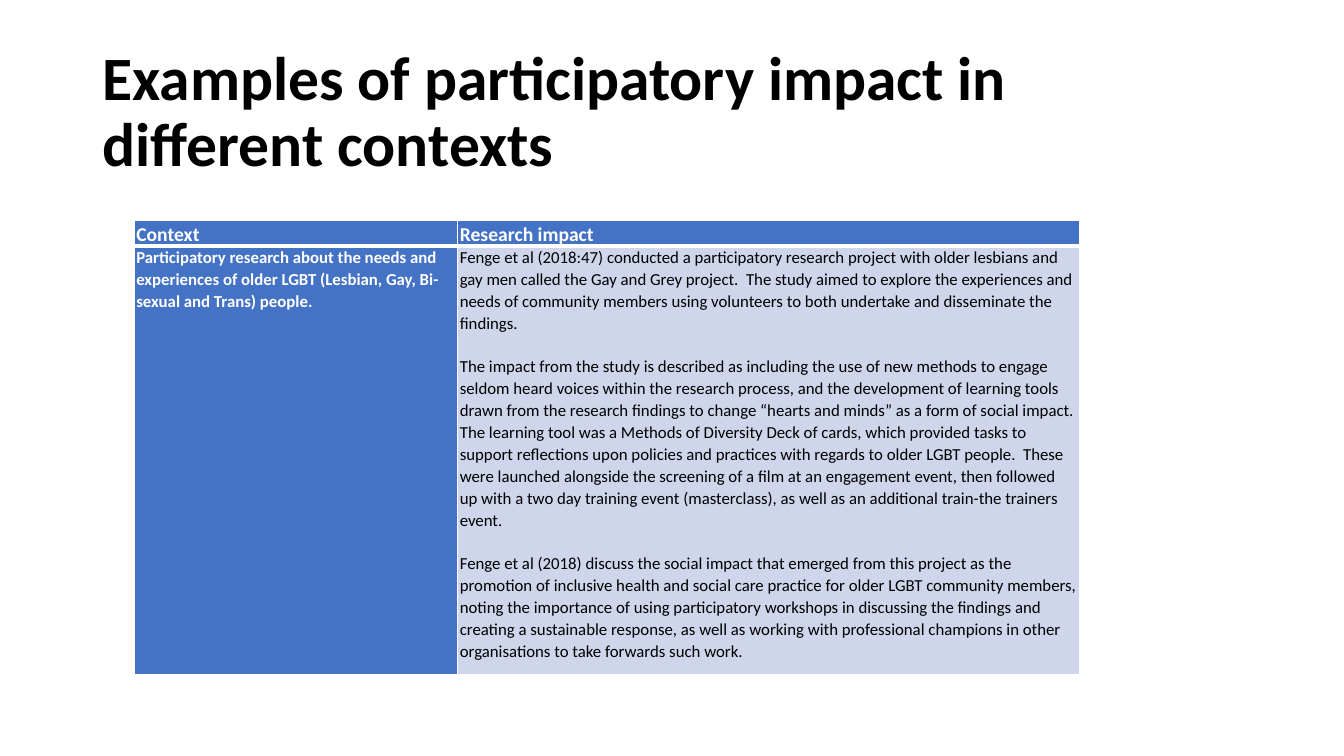
"""Build a slide with a table of participatory research impact."""
from dataclasses import dataclass

from lxml import etree
from pptx import Presentation
from pptx.dml.color import RGBColor
from pptx.enum.text import MSO_ANCHOR
from pptx.oxml.ns import qn
from pptx.util import Pt

MIDDLE = MSO_ANCHOR.MIDDLE
FONT = "Calibri"
COLOURS = {"black": "000000", "white": "FFFFFF", "blue": "4472C4", "pale": "CFD5EA"}
COLUMN_WIDTHS = (231.1, 444.2)
ROW_HEIGHTS = (13, 306)
PARAGRAPH_GAP = 15.6


@dataclass(frozen=True)
class Entry:
    row: int
    column: int
    paragraphs: tuple[str, ...]
    size: float = 12
    bold: bool = True
    colour: str = "white"
    fill: str = "blue"
    bottom_border: float = 1


ENTRIES = (
    Entry(0, 0, ("Context",), size=14, bottom_border=3),
    Entry(0, 1, ("Research impact",), size=14, bottom_border=3),
    Entry(1, 0, (
        "Participatory research about the needs and experiences of older LGBT "
        "(Lesbian, Gay, Bi-sexual and Trans) people.",
    )),
    Entry(1, 1, (
        "Fenge et al (2018:47) conducted a participatory research project with older "
        "lesbians and gay men called the Gay and Grey project.  The study aimed to "
        "explore the experiences and needs of community members using volunteers to "
        "both undertake and disseminate the findings.",
        "The impact from the study is described as including the use of new methods "
        "to engage seldom heard voices within the research process, and the "
        "development of learning tools drawn from the research findings to change "
        "“hearts and minds” as a form of social impact. The learning tool was a "
        "Methods of Diversity Deck of cards, which provided tasks to support "
        "reflections upon policies and practices with regards to older LGBT people.  "
        "These were launched alongside the screening of a film at an engagement "
        "event, then followed up with a two day training event (masterclass), as "
        "well as an additional train-the trainers event.",
        "Fenge et al (2018) discuss the social impact that emerged from this project "
        "as the promotion of inclusive health and social care practice for older LGBT "
        "community members, noting the importance of using participatory workshops in "
        "discussing the findings and creating a sustainable response, as well as "
        "working with professional champions in other organisations to take forwards "
        "such work.",
    ), bold=False, colour="black", fill="pale"),
)


def write_paragraph(paragraph, text: str, *, size: float, bold: bool, colour: str,
                    line_spacing: float, space_before: float = 0) -> None:
    paragraph.line_spacing = line_spacing
    paragraph.space_before = Pt(space_before)
    run = paragraph.add_run()
    run.text = text
    run.font.name = FONT
    run.font.size = Pt(size)
    run.font.bold = bold
    run.font.color.rgb = RGBColor.from_string(COLOURS[colour])


def draw_borders(cell, bottom: float, top: float) -> None:
    properties = cell._tc.get_or_add_tcPr()
    widths = {"a:lnL": 1, "a:lnR": 1, "a:lnT": top, "a:lnB": bottom}
    for position, (side, width) in enumerate(widths.items()):
        border = etree.Element(qn(side), w=str(Pt(width)))
        border_fill = etree.SubElement(border, qn("a:solidFill"))
        etree.SubElement(border_fill, qn("a:srgbClr"), val=COLOURS["white"])
        properties.insert(position, border)


def fill_entry(table, entry: Entry) -> None:
    cell = table.cell(entry.row, entry.column)
    cell.margin_left = cell.margin_right = Pt(1.5)
    cell.margin_top = cell.margin_bottom = Pt(0)
    cell.fill.solid()
    cell.fill.fore_color.rgb = RGBColor.from_string(COLOURS[entry.fill])
    draw_borders(cell, entry.bottom_border, top=3 if entry.row else 1)
    frame = cell.text_frame
    for index, text in enumerate(entry.paragraphs):
        paragraph = frame.add_paragraph() if index else frame.paragraphs[0]
        write_paragraph(paragraph, text, size=entry.size, bold=entry.bold,
                        colour=entry.colour, line_spacing=1.07,
                        space_before=PARAGRAPH_GAP if index else 0)


def add_title(slide, text: str) -> None:
    title = slide.shapes.add_textbox(Pt(66), Pt(28.75), Pt(828), Pt(104.4)).text_frame
    title.word_wrap = True
    title.vertical_anchor = MIDDLE
    write_paragraph(title.paragraphs[0], text, size=44, bold=True, colour="black",
                    line_spacing=0.9)


def add_impact_table(slide) -> None:
    table = slide.shapes.add_table(
        len(ROW_HEIGHTS), len(COLUMN_WIDTHS), Pt(95.9), Pt(157.7),
        Pt(sum(COLUMN_WIDTHS)), Pt(sum(ROW_HEIGHTS))).table
    table.horz_banding = False
    for column, width in zip(table.columns, COLUMN_WIDTHS):
        column.width = Pt(width)
    for row, height in zip(table.rows, ROW_HEIGHTS):
        row.height = Pt(height)
    for entry in ENTRIES:
        fill_entry(table, entry)


def main() -> None:
    presentation = Presentation()
    presentation.slide_width, presentation.slide_height = Pt(960), Pt(540)
    slide = presentation.slides.add_slide(presentation.slide_layouts[6])
    add_title(slide, "Examples of participatory impact in different contexts")
    add_impact_table(slide)
    presentation.save("out.pptx")


if __name__ == "__main__":
    main()
